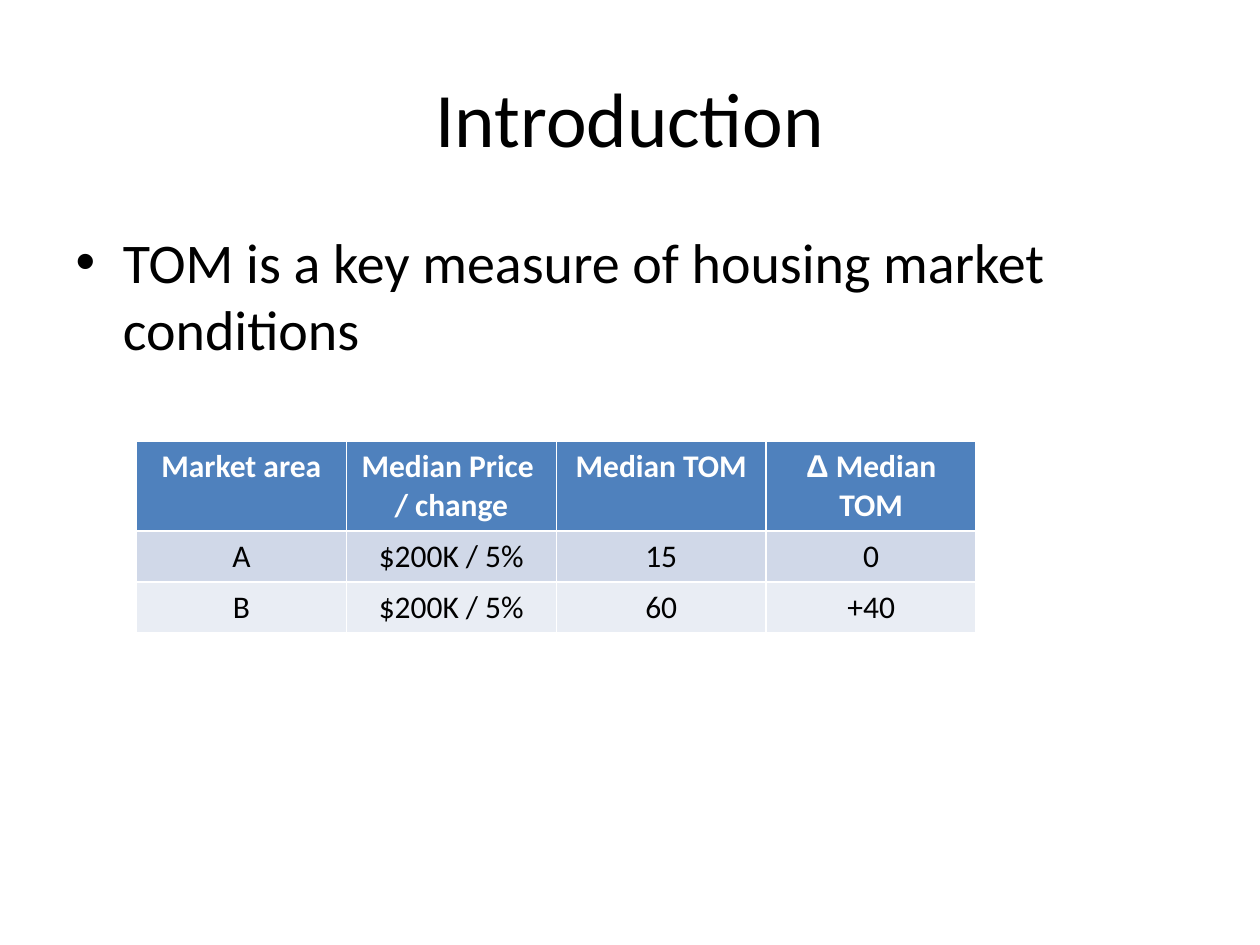
from pptx import Presentation
from pptx import util as u
from pptx.dml.color import RGBColor
from pptx.enum import text as t

BLACK = RGBColor(0x00, 0x00, 0x00)
WHITE = RGBColor(0xFF, 0xFF, 0xFF)
BLUE = RGBColor(0x4F, 0x81, 0xBD)
PALE = RGBColor(0xD0, 0xD8, 0xE8)
LIGHT = RGBColor(0xE9, 0xED, 0xF4)

HEAD = {"name": "Calibri", "size": u.Pt(44)}
LIST = {"name": "Calibri", "size": u.Pt(32)}
TOP = {"name": "Calibri", "size": u.Pt(18), "bold": True}
CELL = {"name": "Calibri", "size": u.Pt(18), "bold": False}

ROWS = [
    ["Market area", "Median Price  / change", "Median TOM", "Δ Median TOM"],
    ["A", "$200K / 5%", "15", "0"],
    ["B", "$200K / 5%", "60", "+40"],
]
FILLS = [BLUE, PALE, LIGHT]


def style(run, form, color):
    for key, val in form.items():
        setattr(run.font, key, val)
    run.font.color.rgb = color


def write(para, words, form, color):
    run = para.add_run()
    run.text = words
    style(run, form, color)


def place(shape, box):
    for key, val in zip(("left", "top", "width", "height"), box):
        setattr(shape, key, u.Cm(val))


def title(slide, box, words):
    shape = slide.shapes.title
    place(shape, box)
    shape.text_frame.vertical_anchor = t.MSO_ANCHOR.MIDDLE
    para = shape.text_frame.paragraphs[0]
    para.alignment = t.PP_ALIGN.CENTER
    write(para, words, HEAD, BLACK)


def points(slide, box, words):
    shape = slide.placeholders[1]
    place(shape, box)
    write(shape.text_frame.paragraphs[0], words, LIST, BLACK)


def fill(cell, words, color, form, ink):
    cell.fill.solid()
    cell.fill.fore_color.rgb = color
    para = cell.text_frame.paragraphs[0]
    para.alignment = t.PP_ALIGN.CENTER
    if words.startswith("Δ"):
        write(para, "Δ", {**form, "name": "Arial"}, ink)
        words = words[1:]
    write(para, words, form, ink)


def market(slide, box):
    area = [u.Cm(val) for val in box]
    grid = slide.shapes.add_table(len(ROWS), len(ROWS[0]), *area).table
    for r, (row, color) in enumerate(zip(ROWS, FILLS)):
        form, ink = (CELL, BLACK) if r else (TOP, WHITE)
        for c, words in enumerate(row):
            fill(grid.cell(r, c), words, color, form, ink)


def main():
    deck = Presentation()
    deck.slide_width, deck.slide_height = u.Cm(25.4), u.Cm(19.05)
    slide = deck.slides.add_slide(deck.slide_layouts[1])
    title(slide, (1.27, 0.76, 22.86, 3.18), "Introduction")
    points(slide, (1.27, 4.45, 22.86, 12.57),
           "TOM is a key measure of housing market conditions")
    market(slide, (2.75, 8.9, 16.93, 3.09))
    deck.save("out.pptx")


if __name__ == "__main__":
    main()
